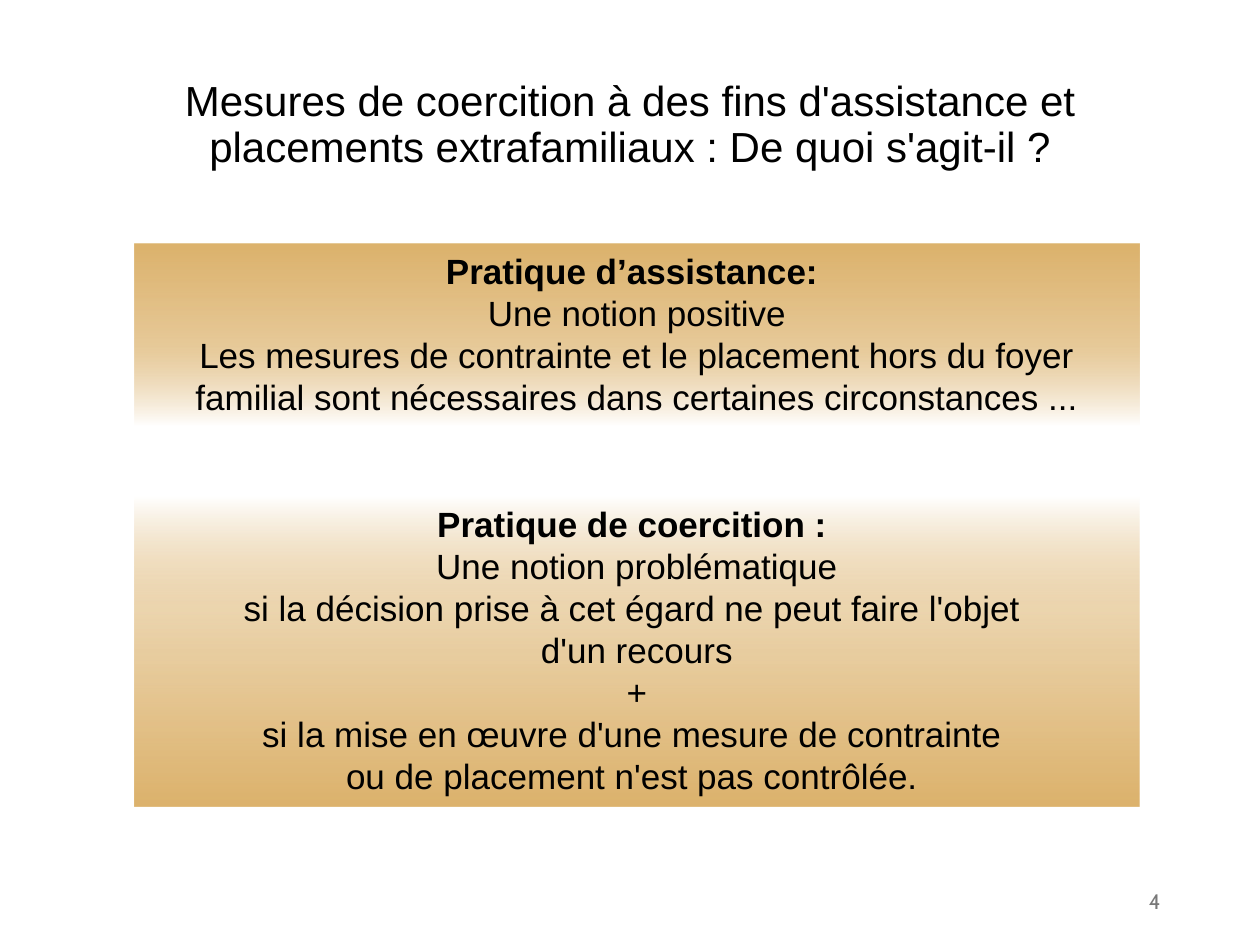
from lxml import etree
from pptx import Presentation
from pptx.dml.color import RGBColor
from pptx.enum.shapes import MSO_SHAPE
from pptx.enum.text import MSO_ANCHOR, MSO_AUTO_SIZE, PP_ALIGN
from pptx.oxml.ns import qn
from pptx.util import Inches, Pt

RECTANGLE = MSO_SHAPE.RECTANGLE
TOP, MIDDLE = MSO_ANCHOR.TOP, MSO_ANCHOR.MIDDLE
CENTER, RIGHT = PP_ALIGN.CENTER, PP_ALIGN.RIGHT
TITLE_ONLY = 5

BLACK = RGBColor(0x00, 0x00, 0x00)
WHITE = RGBColor(0xFF, 0xFF, 0xFF)
GREY = RGBColor(0x79, 0x79, 0x79)
GOLD = RGBColor(0xDC, 0xB2, 0x6C)

PANEL_LEFT, PANEL_WIDTH = 1.07, 7.97
TITLE_FONT = {"name": "Arial", "size": Pt(24), "bold": False}
BODY_FONT = {"name": "Arial", "size": Pt(20), "bold": False}
HEADING_FONT = {**BODY_FONT, "bold": True}
NUMBER_FONT = {"name": "Cabin", "size": Pt(12)}

# Panels: top, height, gradient stops (position %, colour, opacity %), lines
PANELS = [
    (1.93, 1.45, [(0, GOLD, 100), (55, GOLD, 70), (100, WHITE, 100)], [
        "Pratique d’assistance: ",
        "Une notion positive",
        "Les mesures de contrainte et le placement hors du foyer familial "
        "sont nécessaires dans certaines circonstances ...",
    ]),
    (3.94, 2.46, [(0, WHITE, 100), (36, GOLD, 54), (100, GOLD, 100)], [
        "Pratique de coercition : ",
        "Une notion problématique",
        "si la décision prise à cet égard ne peut faire l'objet ",
        "d'un recours",
        "+",
        "si la mise en œuvre d'une mesure de contrainte ",
        "ou de placement n'est pas contrôlée. ",
    ]),
]


def set_format(target, values):
    for name, value in values.items():
        setattr(target, name, value)


def place(box, left, top, width, height):
    set_format(box, {"left": Inches(left), "top": Inches(top),
                     "width": Inches(width), "height": Inches(height)})


def write(para, text, font, color, align):
    para.alignment = align
    span = para.add_run()
    span.text = text
    set_format(span.font, font)
    span.font.color.rgb = color


def fill_downwards(shape, stops):
    """Fill the shape with a vertical gradient running from top to bottom."""
    shape.fill.gradient()
    gradient = shape.fill._fill._gradFill
    stop_list = gradient.find(qn("a:gsLst"))
    for old_stop in list(stop_list):
        stop_list.remove(old_stop)
    for position, color, opacity in stops:
        stop = etree.SubElement(stop_list, qn("a:gs"), pos=str(position * 1000))
        tint = etree.SubElement(stop, qn("a:srgbClr"), val=str(color))
        if opacity < 100:
            etree.SubElement(tint, qn("a:alpha"), val=str(opacity * 1000))
    shape.fill.gradient_angle = 270


def add_panel(page, top, height, stops, lines):
    panel = page.shapes.add_shape(
        RECTANGLE, Inches(PANEL_LEFT), Inches(top), Inches(PANEL_WIDTH), Inches(height))
    panel.shadow.inherit = False
    panel.line.fill.background()
    fill_downwards(panel, stops)
    frame = panel.text_frame
    set_format(frame, {"word_wrap": True, "vertical_anchor": TOP,
                       "auto_size": MSO_AUTO_SIZE.SHAPE_TO_FIT_TEXT})
    for index, line in enumerate(lines):
        para = frame.add_paragraph() if index else frame.paragraphs[0]
        write(para, line, BODY_FONT if index else HEADING_FONT, BLACK, CENTER)


def add_title(page, text):
    title = page.shapes.title
    place(title, 0.69, 0.4, 8.62, 1.2)
    set_format(title.text_frame, {"word_wrap": True, "vertical_anchor": MIDDLE})
    para = title.text_frame.paragraphs[0]
    para.line_spacing = 0.9
    write(para, text, TITLE_FONT, BLACK, CENTER)


def add_page_number(page, number):
    box = page.shapes.add_textbox(
        Inches(7.06), Inches(6.95), Inches(2.25), Inches(0.4))
    set_format(box.text_frame, {"word_wrap": True, "vertical_anchor": MIDDLE})
    write(box.text_frame.paragraphs[0], number, NUMBER_FONT, GREY, RIGHT)


def main():
    deck = Presentation()
    set_format(deck, {"slide_width": Inches(10), "slide_height": Inches(7.5)})
    page = deck.slides.add_slide(deck.slide_layouts[TITLE_ONLY])
    add_title(page, "Mesures de coercition à des fins d'assistance et "
                    "placements extrafamiliaux : De quoi s'agit-il ?")
    for panel in PANELS:
        add_panel(page, *panel)
    add_page_number(page, "4")
    deck.save("out.pptx")


if __name__ == "__main__":
    main()
